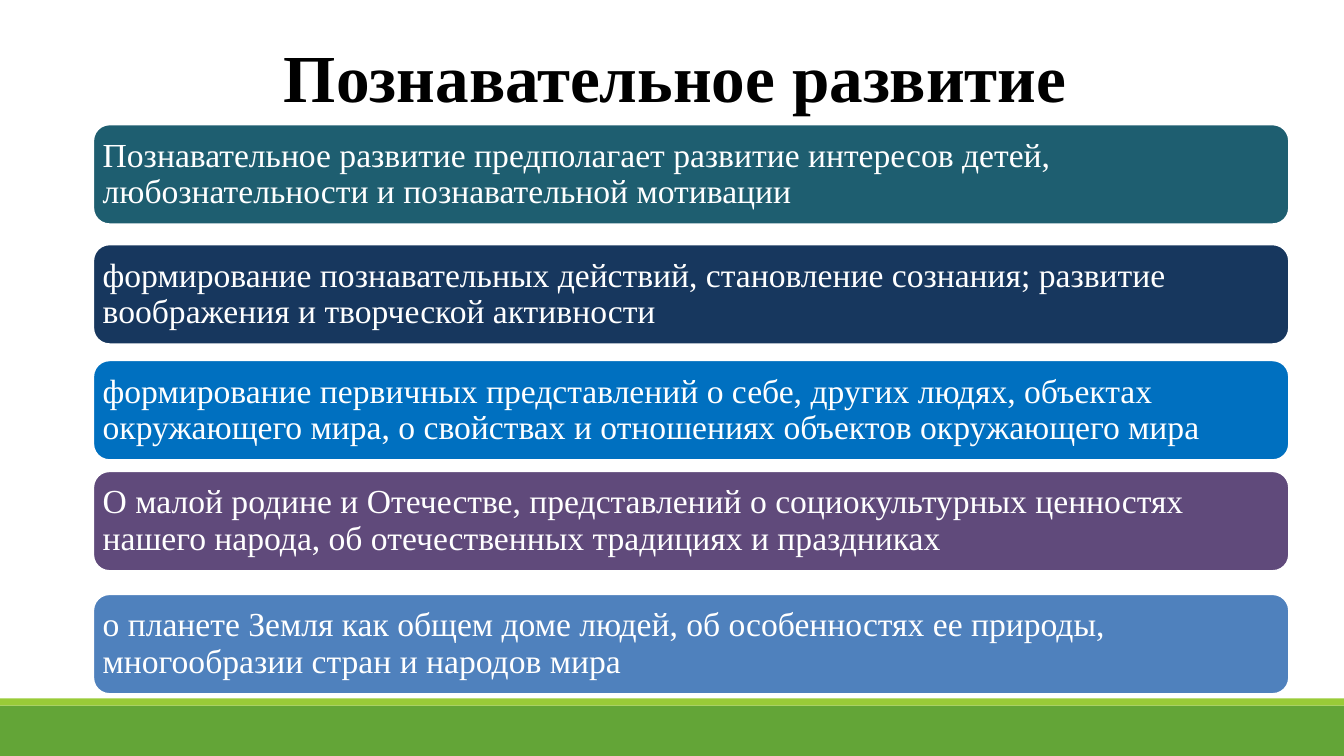
"""Build the slide on cognitive development with five coloured bars."""
from pptx import Presentation
from pptx.dml.color import RGBColor
from pptx.enum import shapes, text
from pptx.util import Inches, Pt

FONT = "Times New Roman"
BARS = [
    (1.23, "1E5E70", "Познавательное развитие предполагает развитие интересов детей, "
     "любознательности и познавательной мотивации"),
    (2.42, "17375E", "формирование познавательных действий, становление сознания; "
     "развитие воображения и творческой активности"),
    (3.57, "0070C0", "формирование первичных представлений о себе, других людях, объектах "
     "окружающего мира, о свойствах и отношениях объектов окружающего мира"),
    (4.67, "604A7B", "О малой родине и Отечестве, представлений о социокультурных ценностях "
     "нашего народа, об отечественных традициях и праздниках"),
    (5.89, "4F81BD", "о планете Земля как общем доме людей, об особенностях ее природы, "
     "многообразии стран и народов мира"),
]


def paint(target, color):
    target.solid()
    target.fore_color.rgb = RGBColor.from_string(color)


def block(kind, left, top, width, height, color):
    shape = slide.shapes.add_shape(
        kind, Inches(left), Inches(top), Inches(width), Inches(height))
    shape.shadow.inherit = False
    paint(shape.fill, color)
    shape.line.fill.background()
    return shape


deck = Presentation()
deck.slide_width, deck.slide_height = Inches(13.33), Inches(7.5)
slide = deck.slides.add_slide(deck.slide_layouts[5])

for top, height, color in [(7, 0.5, "63A537"), (6.93, 0.07, "99CB38")]:
    block(shapes.MSO_SHAPE.RECTANGLE, 0, top, 13.33, height, color)

title = slide.shapes.title
title.left, title.top = Inches(1.2), Inches(0.31)
title.width, title.height = Inches(11), Inches(1.59)
frame = title.text_frame
frame.text = "Познавательное развитие"
frame.vertical_anchor = text.MSO_ANCHOR.TOP
frame.margin_top = Inches(0.16)
head = frame.paragraphs[0]
head.alignment = text.PP_ALIGN.CENTER
head.line_spacing = 0.85
head.font.name, head.font.size, head.font.bold = FONT, Pt(48), True
paint(head.font.fill, "000000")

for top, color, words in BARS:
    bar = block(shapes.MSO_SHAPE.ROUNDED_RECTANGLE, 0.92, top, 11.87, 1, color)
    paint(bar.line.fill, "FFFFFF")
    bar.line.width = Pt(2)
    frame = bar.text_frame
    frame.text = words
    frame.word_wrap = True
    frame.vertical_anchor = text.MSO_ANCHOR.MIDDLE
    frame.margin_left = frame.margin_right = Inches(0.05)
    frame.margin_top = frame.margin_bottom = Inches(0.05)
    para = frame.paragraphs[0]
    para.alignment = text.PP_ALIGN.LEFT
    para.line_spacing = 0.9
    para.font.name, para.font.size = FONT, Pt(24)
    paint(para.font.fill, "FFFFFF")

deck.save("out.pptx")
